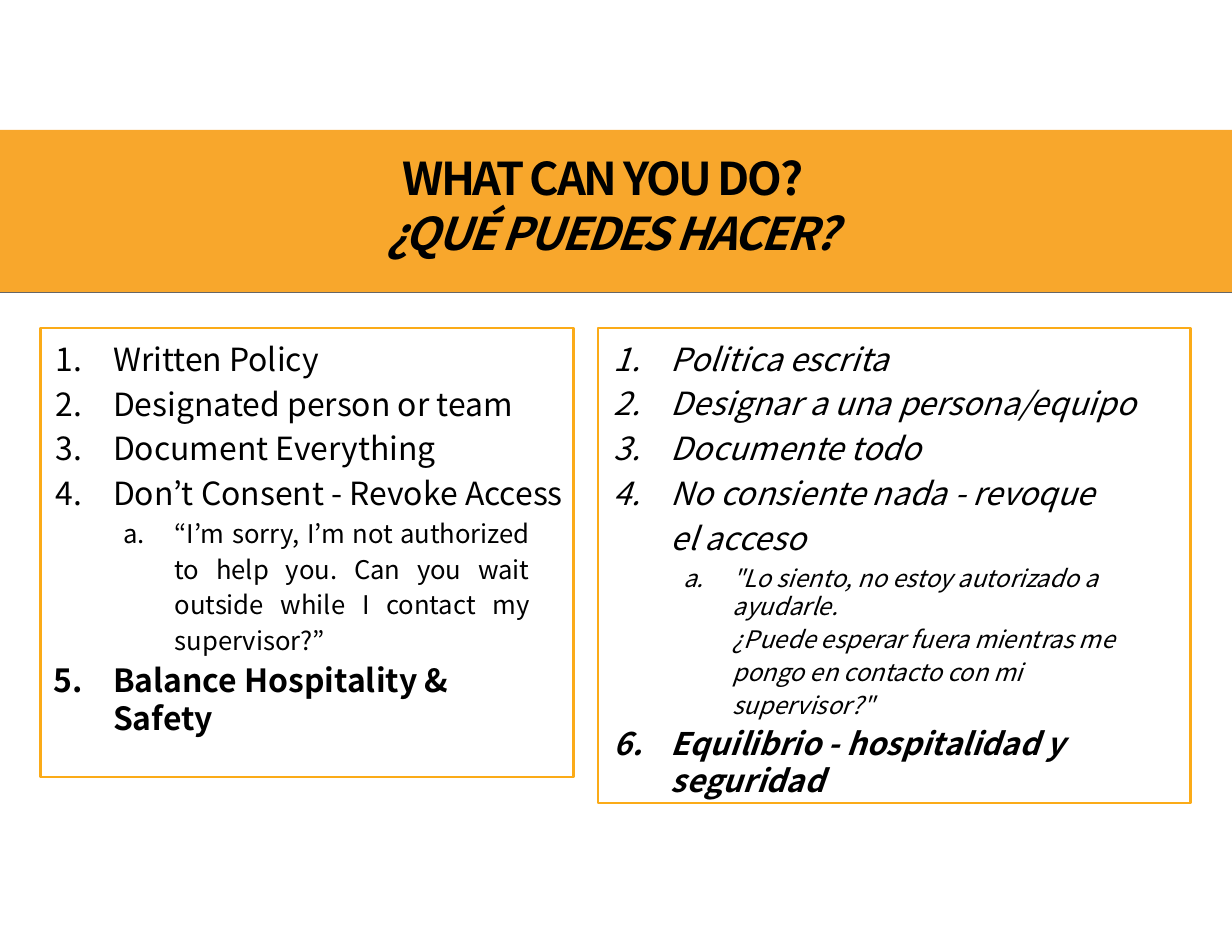
from dataclasses import dataclass

from lxml import etree
from pptx import Presentation
from pptx.dml.color import RGBColor
from pptx.enum.shapes import MSO_CONNECTOR, MSO_SHAPE
from pptx.enum.text import MSO_ANCHOR, MSO_AUTO_SIZE, PP_ALIGN
from pptx.oxml.ns import qn
from pptx.util import Inches, Pt


@dataclass(frozen=True)
class Theme:
    font: str = "Noto Sans CJK JP"
    text: RGBColor = RGBColor(0x00, 0x00, 0x00)
    band: RGBColor = RGBColor(0xF8, 0xA7, 0x2C)
    rule: RGBColor = RGBColor(0x66, 0x66, 0x66)
    frame: RGBColor = RGBColor(0xFB, 0xAB, 0x18)
    title: float = 29
    item: float = 20.5
    quote_en: float = 16.5
    quote_es: float = 15.5
    closing_es: float = 20


@dataclass(frozen=True)
class Item:
    text: str
    size: float
    before: float = 4.2
    spacing: float = 1.0
    left: float = 0.65
    hang: float = 0.51
    right: float = 0
    numbering: str = "arabicPeriod"
    start: int = 1
    level: int = 0
    bold: bool = False
    align: PP_ALIGN = PP_ALIGN.LEFT


T = Theme()

ENGLISH = [
    Item("Written Policy", T.item, before=7),
    Item("Designated person or team", T.item),
    Item("Document Everything", T.item),
    Item("Don’t Consent - Revoke Access", T.item),
    Item("“I’m sorry, I’m not authorized to help you. Can you wait outside "
         "while I contact my supervisor?”", T.quote_en, before=1.1,
         spacing=1.15, left=1.2, hang=0.46, right=0.39,
         numbering="alphaLcPeriod", level=1, align=PP_ALIGN.JUSTIFY),
    Item("Balance Hospitality & Safety", T.item, before=3.2, hang=0.53,
         right=0.5, bold=True),
]
SPANISH = [
    Item("Politica escrita", T.item, before=7),
    Item("Designar a una persona/equipo", T.item),
    Item("Documente todo", T.item),
    Item("No consiente nada - revoque el acceso", T.item, before=0,
         spacing=1.17, right=0.6),
    Item('"Lo siento, no estoy autorizado a ayudarle.', T.quote_es, before=4,
         left=1.2, hang=0.44, right=0.5, numbering="alphaLcPeriod", level=1),
    Item('¿Puede esperar fuera mientras me pongo en contacto con mi supervisor?"',
         T.quote_es, before=0, spacing=1.14, left=1.2, hang=0, right=0.5,
         numbering=""),
    Item("Equilibrio - hospitalidad y seguridad", T.closing_es, before=2.9,
         right=0.6, start=6, bold=True),
]


def prepare_frame(tf):
    tf.word_wrap = True
    tf.auto_size = MSO_AUTO_SIZE.NONE
    tf.vertical_anchor = MSO_ANCHOR.TOP
    tf.margin_left = tf.margin_right = tf.margin_bottom = 0
    tf.margin_top = Inches(0.1)


def indent(p, left, hang=0, right=0):
    pPr = p._p.get_or_add_pPr()
    pPr.set("marL", str(Inches(left)))
    pPr.set("marR", str(Inches(right)))
    pPr.set("indent", str(-Inches(hang)))
    return pPr


def style_run(r, size, bold, italic):
    r.font.name = T.font
    r.font.size = Pt(size)
    r.font.bold = bold
    r.font.italic = italic
    r.font.color.rgb = T.text


def add_band(s, x, y, w, h):
    """Coloured title band with a thin rule along its lower edge."""
    band = s.shapes.add_shape(MSO_SHAPE.RECTANGLE, x, y, w, h)
    band.shadow.inherit = False
    band.fill.solid()
    band.fill.fore_color.rgb = T.band
    band.line.fill.background()
    rule = s.shapes.add_connector(MSO_CONNECTOR.STRAIGHT, x, y + h, x + w, y + h)
    rule.line.color.rgb = T.rule
    rule.line.width = Pt(0.82)
    etree.SubElement(rule._element.spPr, qn("a:effectLst"))


def place_title(s, x, y, w, h):
    title = s.shapes.title
    title._element.getparent().append(title._element)  # in front of the band
    title.left, title.top, title.width, title.height = x, y, w, h
    tf = title.text_frame
    prepare_frame(tf)
    tf.text = "WHAT CAN YOU DO?\n¿QUÉ PUEDES HACER?"
    for p, left, before, italic in zip(tf.paragraphs, (3, 2.87), (1.4, 0.5),
                                       (False, True)):
        p.alignment = PP_ALIGN.LEFT
        p.space_before = Pt(before)
        indent(p, left)
        r = p.runs[0]
        style_run(r, T.title, True, italic)
        r._r.get_or_add_rPr().set("spc", "-150")


def add_list(s, x, y, w, h, items, italic):
    """Framed numbered list."""
    sp = s.shapes.add_shape(MSO_SHAPE.RECTANGLE, x, y, w, h)
    sp.shadow.inherit = False
    sp.fill.background()
    sp.line.color.rgb = T.frame
    sp.line.width = Pt(1.65)
    tf = sp.text_frame
    prepare_frame(tf)
    tf.text = "\n".join(item.text for item in items)
    for p, item in zip(tf.paragraphs, items):
        p.level = item.level
        p.alignment = item.align
        p.line_spacing = item.spacing
        p.space_before = Pt(item.before)
        pPr = indent(p, item.left, item.hang, item.right)
        if item.numbering:
            number = etree.SubElement(pPr, qn("a:buAutoNum"), type=item.numbering)
            if item.start > 1:
                number.set("startAt", str(item.start))
        style_run(p.runs[0], item.size, item.bold, italic)


def main():
    prs = Presentation()
    prs.slide_width, prs.slide_height = Inches(11), Inches(8.5)
    s = prs.slides.add_slide(prs.slide_layouts[5])
    add_band(s, 0, Inches(1.16), prs.slide_width, Inches(1.45))
    place_title(s, Inches(0.59), Inches(1.24), Inches(9.83), Inches(1.08))
    top = Inches(2.93)
    add_list(s, Inches(0.36), top, Inches(4.76), Inches(4.01), ENGLISH, False)
    add_list(s, Inches(5.34), top, Inches(5.29), Inches(4.24), SPANISH, True)
    prs.save("out.pptx")


if __name__ == "__main__":
    main()
